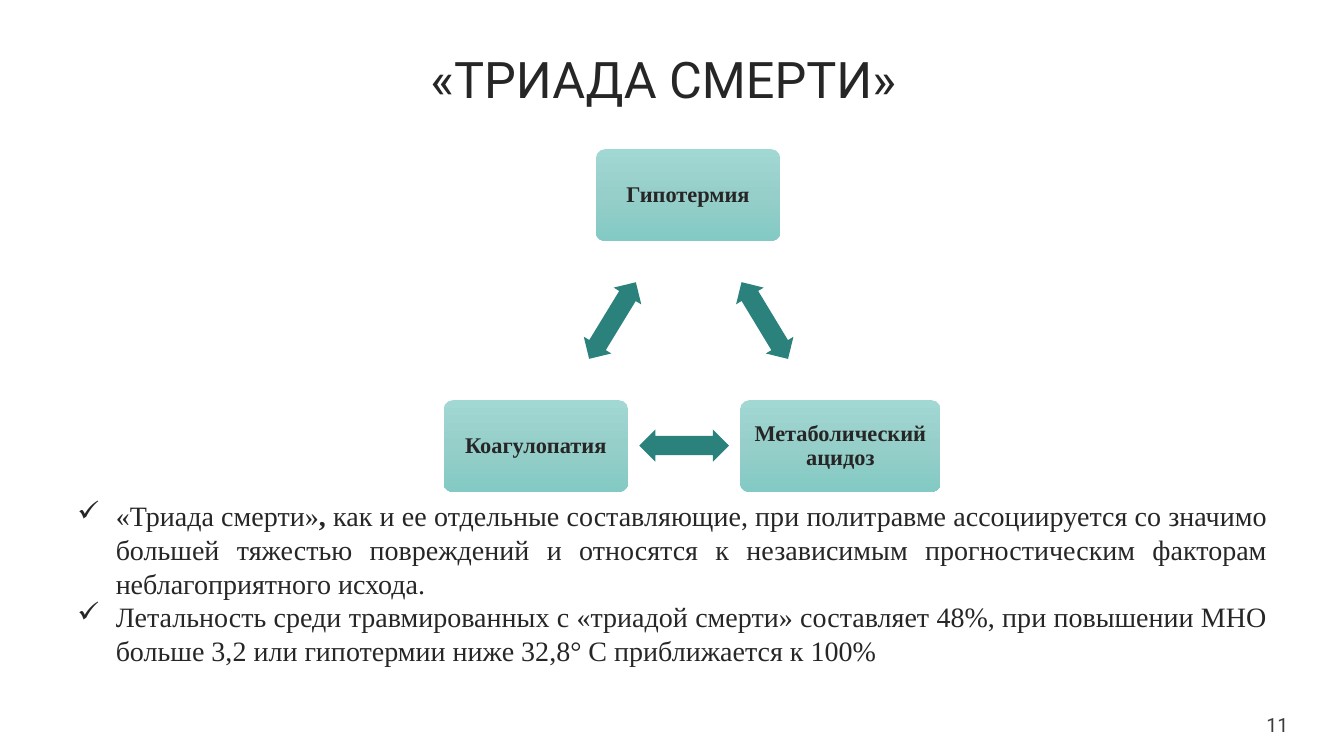
from copy import deepcopy
from dataclasses import dataclass

from pptx import Presentation
from pptx.dml.color import RGBColor
from pptx.enum.shapes import MSO_SHAPE
from pptx.enum.text import MSO_ANCHOR, MSO_AUTO_SIZE, PP_ALIGN
from pptx.oxml import parse_xml
from pptx.oxml.ns import nsdecls, qn
from pptx.util import Pt

PX = 9144


@dataclass(frozen=True)
class Theme:
    sans: str = "Roboto"
    serif: str = "Times New Roman"
    text: str = "262626"
    number: str = "3C3C3C"
    arrow: str = "2B827C"
    card: tuple = ((0, "A2D8D3"), (0.5, "96CEC9"), (1, "83CAC4"))
    title_size: int = 36
    body_size: int = 20
    card_size: int = 16
    number_size: int = 14


def apply(obj, values):
    for name, value in values.items():
        setattr(obj, name, value)


class SlideBuilder:
    def __init__(self, prs, theme):
        self.theme = theme
        self.slide = prs.slides.add_slide(prs.slide_layouts[5])

    def place(self, sp, box):
        apply(sp, dict(zip(("left", "top", "width", "height"), (v * PX for v in box))))

    def frame(self, tf, anchor, insets=(0, 0, 0, 0)):
        names = ("margin_left", "margin_top", "margin_right", "margin_bottom")
        apply(tf, dict(zip(names, (v * PX for v in insets))))
        apply(tf, {"word_wrap": True, "auto_size": MSO_AUTO_SIZE.NONE, "vertical_anchor": anchor})

    def fill_paragraph(self, p, runs, font, size, color, align, spacing=1.0):
        apply(p, {"alignment": align, "line_spacing": spacing, "space_before": Pt(0)})
        for text, bold in runs:
            r = p.add_run()
            r.text = text
            apply(r.font, {"name": font, "size": Pt(size), "bold": bold})
            r.font.color.rgb = RGBColor.from_string(color)

    def title(self, text, box):
        t, sp = self.theme, self.slide.shapes.title
        self.place(sp, box)
        self.frame(sp.text_frame, MSO_ANCHOR.TOP, (10, 5, 10, 5))
        self.fill_paragraph(sp.text_frame.paragraphs[0], [(text, False)], t.sans, t.title_size,
                            t.text, PP_ALIGN.CENTER, 0.9)

    def shape(self, kind, box, adjustments):
        sp = self.slide.shapes.add_shape(kind, *(v * PX for v in box))
        sp.shadow.inherit = False
        sp.line.fill.background()
        for i, value in enumerate(adjustments):
            sp.adjustments[i] = value
        return sp

    def card(self, text, box):
        t = self.theme
        sp = self.shape(MSO_SHAPE.ROUNDED_RECTANGLE, box, [0.1])
        sp.fill.gradient()
        sp.fill.gradient_angle = 270
        stops = sp.element.spPr.find(qn("a:gradFill")).find(qn("a:gsLst"))
        stops.insert(1, deepcopy(stops[0]))
        for stop, (position, color) in zip(sp.fill.gradient_stops, t.card):
            stop.position = position
            stop.color.rgb = RGBColor.from_string(color)
        self.frame(sp.text_frame, MSO_ANCHOR.MIDDLE, (7, 7, 7, 7))
        self.fill_paragraph(sp.text_frame.paragraphs[0], [(text, True)], t.serif, t.card_size,
                            t.text, PP_ALIGN.CENTER, 0.9)

    def arrow(self, box, rotation):
        sp = self.shape(MSO_SHAPE.LEFT_RIGHT_ARROW, box, [0.6, 0.5])
        sp.fill.solid()
        sp.fill.fore_color.rgb = RGBColor.from_string(self.theme.arrow)
        sp.rotation = rotation

    def textbox(self, box, anchor, insets=(0, 0, 0, 0)):
        tf = self.slide.shapes.add_textbox(*(v * PX for v in box)).text_frame
        self.frame(tf, anchor, insets)
        return tf

    def bullets(self, items, box):
        t = self.theme
        tf = self.textbox(box, MSO_ANCHOR.TOP, (10, 0, 10, 0))
        for i, runs in enumerate(items):
            p = tf.add_paragraph() if i else tf.paragraphs[0]
            pPr = p._p.get_or_add_pPr()
            for name, value in {"marL": 38 * PX, "indent": -38 * PX}.items():
                pPr.set(name, str(value))
            pPr.append(parse_xml(f'<a:buChar {nsdecls("a")} char="✓"/>'))
            self.fill_paragraph(p, runs, t.serif, t.body_size, t.text, PP_ALIGN.JUSTIFY)

    def number(self, text, box):
        t = self.theme
        tf = self.textbox(box, MSO_ANCHOR.MIDDLE)
        self.fill_paragraph(tf.paragraphs[0], [(text, False)], t.sans, t.number_size,
                            t.number, PP_ALIGN.RIGHT)


def main():
    prs = Presentation()
    apply(prs, {"slide_width": 1333 * PX, "slide_height": 750 * PX})
    s = SlideBuilder(prs, Theme())
    s.title("«ТРИАДА СМЕРТИ»", (58, 50, 1200, 76))
    s.bullets([
        [("«Триада смерти»", False), (", ", True),
         ("как и ее отдельные составляющие, при политравме ассоциируется со значимо "
          "большей тяжестью повреждений и относятся к независимым прогностическим "
          "факторам неблагоприятного исхода.", False)],
        [("Летальность среди травмированных с «триадой смерти» составляет 48%, при "
          "повышении МНО больше 3,2 или гипотермии ниже 32,8° С приближается к 100%", False)],
    ], (67, 495, 1200, 191))
    for text, left, top, width in (("Гипотермия", 591, 148, 183),
                                   ("Метаболический ацидоз", 734, 397, 199),
                                   ("Коагулопатия", 440, 397, 183)):
        s.card(text, (left, top, width, 91))
    for left, top, rotation in ((714, 302, 58.8), (634, 426, 0), (563, 302, -58.6)):
        s.arrow((left, top, 89, 32), rotation)
    s.number("11", (1253, 707, 25, 24))
    prs.save("out.pptx")


if __name__ == "__main__":
    main()
